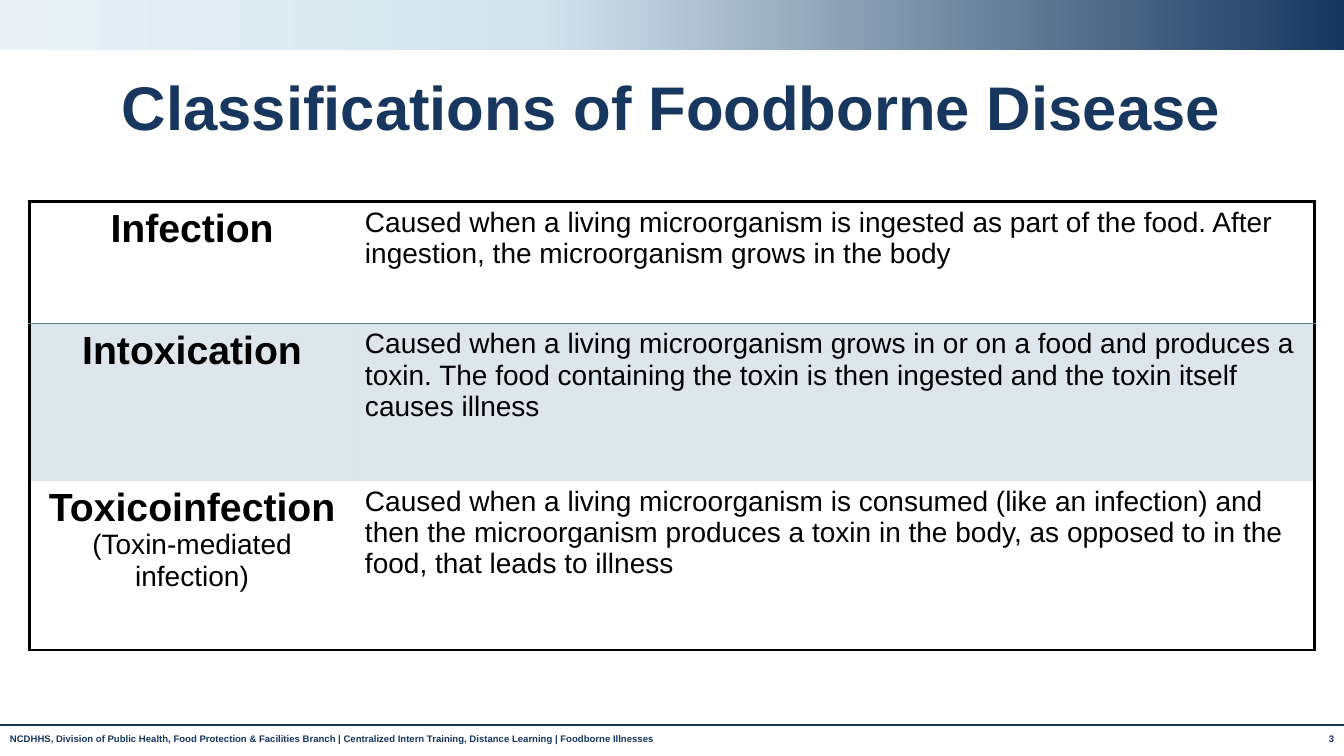
from copy import deepcopy
from lxml.etree import SubElement as Sub
from pptx import Presentation
from pptx.dml.color import RGBColor as Rgb
from pptx.enum.shapes import MSO_CONNECTOR as Conn, MSO_SHAPE as Shape
from pptx.enum.text import PP_ALIGN as Align
from pptx.oxml.ns import qn
from pptx.util import Inches, Pt

WIDE, HIGH = Inches(13.33), Inches(7.5)
HUES = {"navy": "17375E", "foot": "15365E", "sky": "D3E4ED", "pale": "E9F1F6",
        "teal": "52849C", "ink": "000000"}
FOOT = ("NCDHHS, Division of Public Health, Food Protection & Facilities Branch | "
        "Centralized Intern Training, Distance Learning | Foodborne Illnesses")
KINDS = [
    ("Infection", "",
     "Caused when a living microorganism is ingested as part of the food. "
     "After ingestion, the microorganism grows in the body"),
    ("Intoxication", "",
     "Caused when a living microorganism grows in or on a food and produces a toxin. "
     "The food containing the toxin is then ingested and the toxin itself causes illness"),
    ("Toxicoinfection ", "(Toxin-mediated infection)",
     "Caused when a living microorganism is consumed (like an infection) and then the "
     "microorganism produces a toxin in the body, as opposed to in the food, that leads to illness"),
]
COLS = [24.23, 71.42]
ROWS = [16.13, 20.8, 22.4]


def across(part):
    """Turn a percentage of the slide's width into a length."""
    return int(WIDE * part / 100)


def down(part):
    """Turn a percentage of the slide's height into a length."""
    return int(HIGH * part / 100)


def place(left, top, width, height):
    """Turn four percentages into a position and a size."""
    return across(left), down(top), across(width), down(height)


def style(run, size, hue, bold):
    """Format one run of text."""
    font = run.font
    font.name, font.size, font.bold = "Arial", Pt(size), bold
    font.color.rgb = Rgb.from_string(HUES[hue])


def add_text(slide, text, spot, size, hue, align=Align.LEFT):
    """Add a bold one-line text box and return its frame."""
    frame = slide.shapes.add_textbox(*place(*spot)).text_frame
    frame.word_wrap = True
    para = frame.paragraphs[0]
    para.text, para.alignment = text, align
    style(para.runs[0], size, hue, True)
    return frame


def add_band(slide):
    """Add the gradient band along the top edge."""
    band = slide.shapes.add_shape(Shape.RECTANGLE, *place(0, 0, 100, 6.67))
    band.shadow.inherit = False
    band.line.fill.background()
    band.fill.gradient()
    band.fill.gradient_angle = 180
    stops = band.element.spPr.find(".//" + qn("a:gsLst"))
    stops.append(deepcopy(stops[-1]))
    marks = zip(band.fill.gradient_stops, (0, 0.6, 1), ("navy", "sky", "pale"))
    for stop, share, hue in marks:
        stop.position = share
        stop.color.rgb = Rgb.from_string(HUES[hue])


def add_rule(slide, top):
    """Add a full-width rule."""
    rule = slide.shapes.add_connector(Conn.STRAIGHT, 0, down(top), WIDE, down(top))
    rule.line.color.rgb = Rgb.from_string(HUES["navy"])
    rule.line.width = Pt(1.75)
    Sub(rule.element.spPr, qn("a:effectLst"))


def set_edges(cell, edges):
    """Draw the given edges of a cell and hide the others."""
    props = cell._tc.get_or_add_tcPr()
    for side in "LRTB":
        line = Sub(props, qn("a:ln" + side))
        if side in edges:
            hue, width = edges[side]
            line.set("w", str(Pt(width)))
            fill = Sub(line, qn("a:solidFill"))
            Sub(fill, qn("a:srgbClr"), val=HUES[hue])
        else:
            Sub(line, qn("a:noFill"))


def fill_cell(cell, tint):
    """Give a cell a pale tint or no fill."""
    if not tint:
        cell.fill.background()
        return
    cell.fill.solid()
    cell.fill.fore_color.rgb = Rgb.from_string(HUES["teal"])
    tone = cell._tc.tcPr.find(qn("a:solidFill"))[0]
    Sub(tone, qn("a:alpha"), val="20000")


def find_edges(row, col):
    """Work out the frame and the divider around one cell."""
    frame, thin = ("ink", 2.25), ("teal", 1)
    edges = {"R" if col else "L": frame}
    if row == 0:
        edges.update(T=frame, B=thin)
    elif row == 1:
        edges["T"] = thin
    if row == len(ROWS) - 1:
        edges["B"] = frame
    return edges


def add_grid(slide):
    """Add the table of disease kinds."""
    spot = place(2.18, 26.67, sum(COLS), sum(ROWS))
    table = slide.shapes.add_table(len(ROWS), len(COLS), *spot).table
    table.first_row = table.horz_banding = False
    for col, width in enumerate(COLS):
        table.columns[col].width = across(width)
    for row, (name, note, cause) in enumerate(KINDS):
        table.rows[row].height = down(ROWS[row])
        for col, text in enumerate((name, cause)):
            cell = table.cell(row, col)
            set_edges(cell, find_edges(row, col))
            fill_cell(cell, row == 1)
            para = cell.text_frame.paragraphs[0]
            para.text = text
            para.alignment = Align.LEFT if col else Align.CENTER
            style(para.runs[0], 20 if col else 28, "ink", not col)
            if note and not col:
                extra = para.add_run()
                extra.text = note
                style(extra, 20, "ink", False)


def main():
    """Build and save the slide."""
    deck = Presentation()
    deck.slide_width, deck.slide_height = WIDE, HIGH
    slide = deck.slides.add_slide(deck.slide_layouts[6])
    add_text(slide, FOOT, (0, 96.27, 87.47, 3.87), 6.8, "foot")
    add_text(slide, "3", (95.57, 96.27, 4.43, 4), 6.8, "foot", Align.RIGHT)
    add_band(slide)
    add_rule(slide, 95.87)
    title = add_text(slide, "Classifications of Foodborne Disease",
                     (7.8, 8.93, 84.4, 8), 44, "navy", Align.CENTER)
    title.margin_top = Inches(0.1)
    title.paragraphs[0].line_spacing = 0.9
    add_grid(slide)
    deck.save("out.pptx")


if __name__ == "__main__":
    main()
